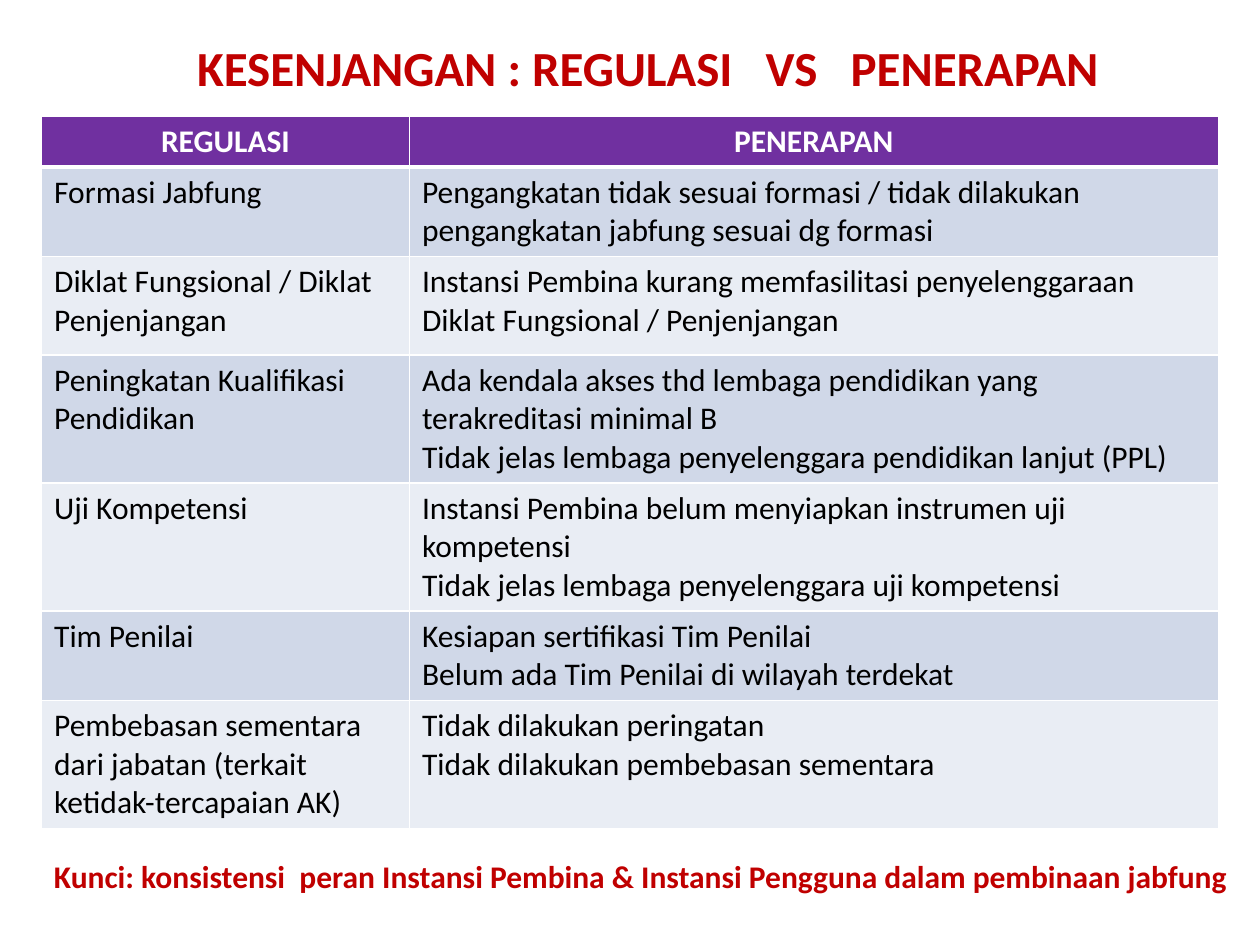
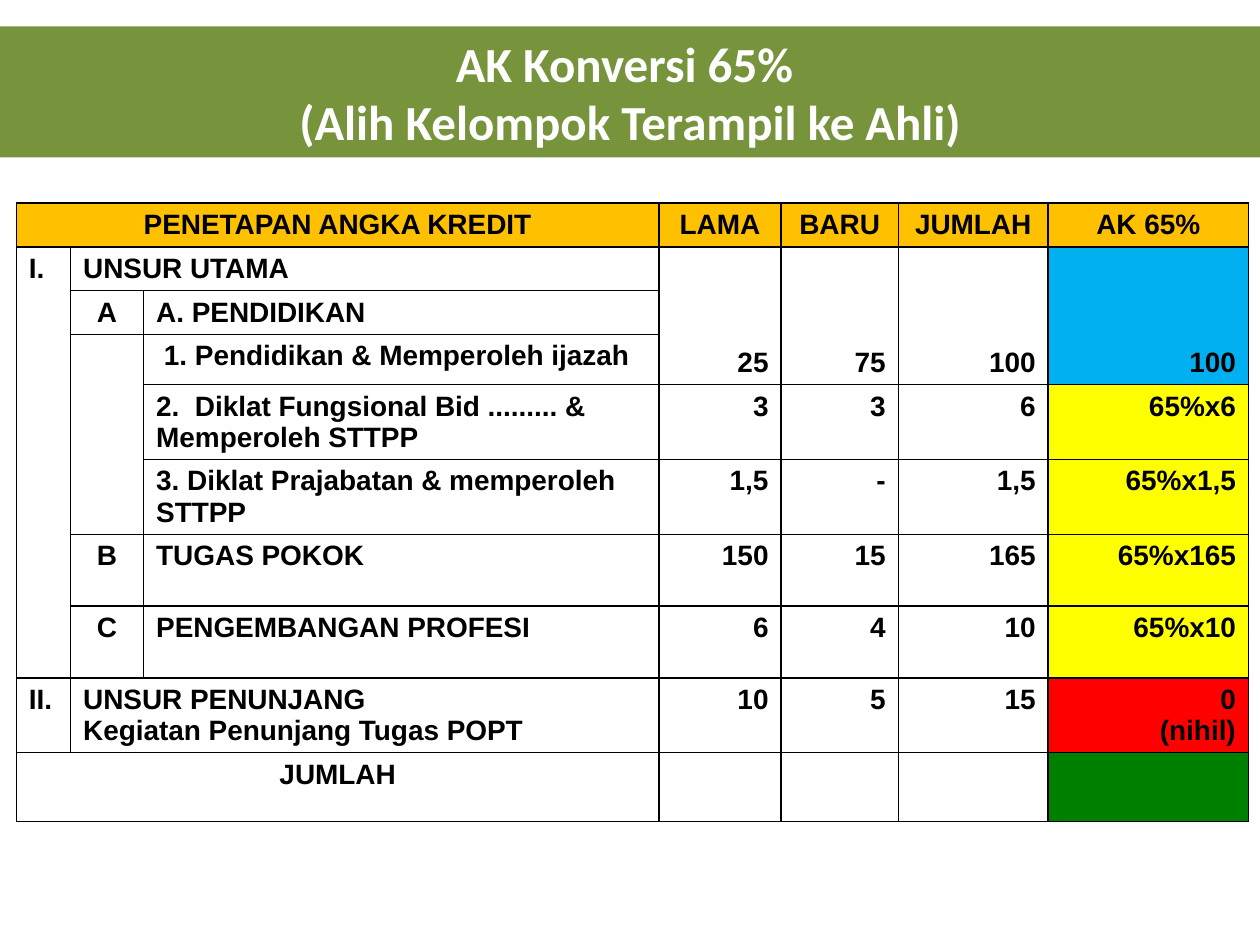
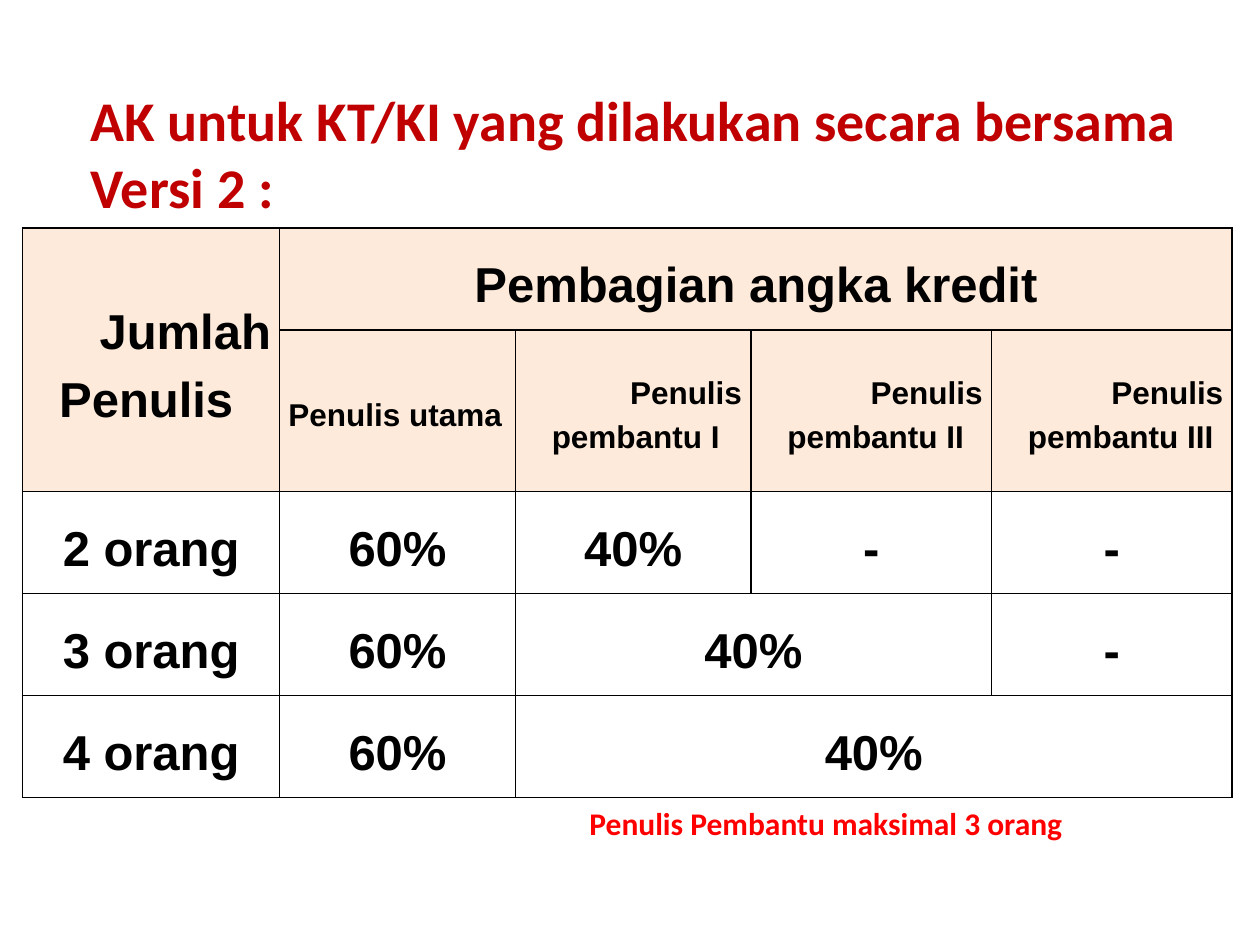
from pptx import Presentation
from pptx.dml.color import RGBColor
from pptx.enum.text import MSO_ANCHOR, MSO_AUTO_SIZE, PP_ALIGN
from pptx.oxml.ns import qn
from pptx.util import Inches, Pt
from lxml import etree

LEFT, CENTER, RIGHT, JUSTIFY = PP_ALIGN.LEFT, PP_ALIGN.CENTER, PP_ALIGN.RIGHT, PP_ALIGN.JUSTIFY
TOP, MIDDLE, BOTTOM = MSO_ANCHOR.TOP, MSO_ANCHOR.MIDDLE, MSO_ANCHOR.BOTTOM
NO_FIT = MSO_AUTO_SIZE.NONE

WHITE = RGBColor(0xFF, 0xFF, 0xFF)
BLACK = RGBColor(0, 0, 0)
DARK_RED = RGBColor(0xC0, 0, 0)
RED = RGBColor(0xFF, 0, 0)
PURPLE = RGBColor(0x70, 0x30, 0xA0)
BAND_DARK = RGBColor(0xD0, 0xD8, 0xE8)
BAND_LIGHT = RGBColor(0xE9, 0xED, 0xF4)
OLIVE = RGBColor(0x77, 0x93, 0x3C)
AMBER = RGBColor(0xFF, 0xC0, 0)
BLUE = RGBColor(0, 0xB0, 0xF0)
YELLOW = RGBColor(0xFF, 0xFF, 0)
GREEN = RGBColor(0, 0x80, 0)
PEACH = RGBColor(0xFD, 0xEA, 0xDA)

HEAD_FONT, TABLE_FONT = "Calibri", "Arial"
W, H = Inches(10), Inches(7.5)


# Lengths are percentages of the slide's width and height
def across(share):
    return int(W * share / 100)


def down(share):
    return int(H * share / 100)


def put_text(tf, text, size=18, color=BLACK, bold=True, font=HEAD_FONT, align=LEFT,
             line=None, gap=None, margin=None, indent=None):
    """Write one paragraph for each line of text."""
    for i, words in enumerate(text.split("\n")):
        p = tf.paragraphs[0] if i == 0 else tf.add_paragraph()
        p.alignment = align
        if line:
            p.line_spacing = line
        if gap is not None:
            p.space_before = p.space_after = Pt(gap)
        if margin is not None:
            pPr = p._p.get_or_add_pPr()
            pPr.set("marL", str(Inches(margin)))
            pPr.set("indent", str(Inches(indent)))
        r = p.add_run()
        r.text = words
        r.font.name, r.font.size, r.font.bold = font, Pt(size), bold
        r.font.color.rgb = color


def set_box(sp, box, wrap):
    left, top, width, height = box
    sp.left, sp.top = across(left), down(top)
    sp.width, sp.height = across(width), down(height)
    tf = sp.text_frame
    tf.word_wrap = wrap
    tf.auto_size = NO_FIT
    return tf


def add_title(s, text, box, fill=None, wrap=False, **fmt):
    sp = s.shapes.title
    tf = set_box(sp, box, wrap)
    tf.vertical_anchor = MIDDLE
    if fill is not None:
        sp.fill.solid()
        sp.fill.fore_color.rgb = fill
    put_text(tf, text, **fmt)


def add_note(s, text, box, color):
    sp = s.shapes.add_textbox(0, 0, 0, 0)
    put_text(set_box(sp, box, False), text, color=color)


def set_borders(cell, color, widths):
    """Draw the left, right, top and bottom borders, widths in points."""
    tcPr = cell._tc.get_or_add_tcPr()
    for side, width in zip("LRTB", widths):
        ln = etree.SubElement(tcPr, qn("a:ln" + side), w=str(Pt(width)))
        fill = etree.SubElement(ln, qn("a:solidFill"))
        etree.SubElement(fill, qn("a:srgbClr"), val=str(color))


def add_grid(s, left, top, cols, rows, cells, look, line_color, spans=(),
             insets=(0.1, 0.05), head_line=1, **fmt):
    """Add a table; look(row, col) gives a cell's fill, anchor and text format."""
    table = s.shapes.add_table(len(rows), len(cols), across(left), down(top),
                               across(sum(cols)), down(sum(rows))).table
    table.first_row = table.horz_banding = False
    for col, share in zip(table.columns, cols):
        col.width = across(share)
    for row, share in zip(table.rows, rows):
        row.height = down(share)
    for r, words in enumerate(cells):
        for c, text in enumerate(words):
            cell = table.cell(r, c)
            style = {**fmt, **look(r, c)}
            fill = style.pop("fill", None)
            cell.vertical_anchor = style.pop("anchor", TOP)
            cell.margin_left = cell.margin_right = Inches(insets[0])
            cell.margin_top = cell.margin_bottom = Inches(insets[1])
            set_borders(cell, line_color, (1, 1, head_line if r == 1 else 1,
                                           head_line if r == 0 else 1))
            if fill is None:
                cell.fill.background()
            else:
                cell.fill.solid()
                cell.fill.fore_color.rgb = fill
            put_text(cell.text_frame, text, **style)
    for r1, c1, r2, c2 in spans:
        table.cell(r1, c1).merge(table.cell(r2, c2))


# Slide 1: regulation against practice
GAPS = [
    ("REGULASI", "PENERAPAN"),
    ("Formasi Jabfung",
     "Pengangkatan tidak sesuai formasi / tidak dilakukan pengangkatan jabfung sesuai dg formasi"),
    ("Diklat Fungsional / Diklat Penjenjangan",
     "Instansi Pembina kurang memfasilitasi penyelenggaraan Diklat Fungsional / Penjenjangan"),
    ("Peningkatan Kualifikasi Pendidikan",
     "Ada kendala akses thd lembaga pendidikan yang terakreditasi minimal B\n"
     "Tidak jelas lembaga penyelenggara pendidikan lanjut (PPL)"),
    ("Uji Kompetensi",
     "Instansi Pembina belum menyiapkan instrumen uji kompetensi\n"
     "Tidak jelas lembaga penyelenggara uji kompetensi"),
    ("Tim Penilai",
     "Kesiapan sertifikasi Tim Penilai\nBelum ada Tim Penilai di wilayah terdekat"),
    ("Pembebasan sementara dari jabatan (terkait ketidak-tercapaian AK)",
     "Tidak dilakukan peringatan\nTidak dilakukan pembebasan sementara"),
]


def gap_look(r, c):
    if r == 0:
        return dict(fill=PURPLE, color=WHITE, align=CENTER)
    return dict(fill=BAND_DARK if r % 2 else BAND_LIGHT, bold=False)


def gap_slide(s):
    add_title(s, "KESENJANGAN : REGULASI   VS   PENERAPAN", (14.2, 3.33, 74.4, 7.6),
              size=28, color=DARK_RED, align=CENTER)
    add_grid(s, 3.3, 12.27, (29.2, 64.2), (5.2, 9.33, 10.4, 13.33, 13.33, 9.47, 13.33),
             GAPS, gap_look, WHITE, head_line=3)
    add_note(s, "Kunci: konsistensi  peran Instansi Pembina & Instansi Pengguna "
                "dalam pembinaan jabfung", (3.3, 90, 95.9, 5.33), DARK_RED)


# Slide 2: credit points after conversion
CREDITS = [
    ("PENETAPAN ANGKA KREDIT", "", "", "LAMA", "BARU", "JUMLAH", "AK 65%"),
    ("I.", "UNSUR UTAMA", "", "25", "75", "100", "100"),
    ("", "A", "A. PENDIDIKAN", "", "", "", ""),
    ("", "", " 1. Pendidikan & Memperoleh ijazah", "", "", "", ""),
    ("", "", "2.  Diklat Fungsional Bid ......... & Memperoleh STTPP", "3", "3", "6", "65%x6"),
    ("", "", "3. Diklat Prajabatan & memperoleh STTPP", "1,5", "-", "1,5", "65%x1,5"),
    ("", "B", "TUGAS POKOK", "150", "15", "165", "65%x165"),
    ("", "C", "PENGEMBANGAN PROFESI", "6", "4", "10", "65%x10"),
    ("II.", "UNSUR PENUNJANG\nKegiatan Penunjang Tugas POPT", "", "10", "5", "15", "0\n(nihil)"),
    ("JUMLAH", "", "", "", "", "", ""),
]
CREDIT_SPANS = [(0, 0, 0, 2), (1, 0, 7, 0), (1, 1, 1, 2), (3, 1, 5, 1),
                (8, 1, 8, 2), (9, 0, 9, 2)] + [(1, c, 3, c) for c in range(3, 7)]
RESULT_FILLS = [AMBER] + [BLUE] * 3 + [YELLOW] * 4 + [RED, GREEN]


def credit_look(r, c):
    if r == 0:
        return dict(fill=AMBER, align=CENTER, anchor=MIDDLE if c == 0 else TOP)
    if c >= 3:
        return dict(fill=RESULT_FILLS[r] if c == 6 else None, align=RIGHT,
                    anchor=BOTTOM if r <= 3 else TOP)
    centered = r == 9 or (c == 1 and r in (2, 6, 7))
    return dict(align=CENTER if centered else LEFT)


def credit_slide(s):
    add_title(s, "AK Konversi 65% \n(Alih Kelompok Terampil ke Ahli)", (0, 2.8, 100, 13.87),
              fill=OLIVE, wrap=True, size=28, color=WHITE, align=CENTER)
    add_grid(s, 1.3, 21.47, (4.3, 5.8, 40.9, 9.7, 9.3, 11.9, 15.9),
             (4.67, 4.6, 4.6, 5.3, 7.9, 7.9, 7.6, 7.6, 7.9, 7.3),
             CREDITS, credit_look, BLACK, CREDIT_SPANS, size=16, font=TABLE_FONT)


# Slide 3: sharing credit among authors
SHARES = [
    (" Jumlah Penulis", "Pembagian angka kredit", "", "", ""),
    ("", "Penulis utama", " Penulis pembantu I", " Penulis pembantu II",
     " Penulis pembantu III"),
    ("2 orang", "60%", "40%", "-", "-"),
    ("3 orang", "60%", "40%", "", "-"),
    ("4 orang", "60%", "40%", "", ""),
]
SHARE_SPANS = [(0, 0, 1, 0), (0, 1, 0, 4), (3, 2, 3, 3), (4, 2, 4, 4)]


def share_look(r, c):
    justified = r == 1 or (r, c) == (0, 0)
    return dict(fill=PEACH if r < 2 else None, anchor=MIDDLE, size=18 if r == 1 else 28,
                align=JUSTIFY if justified else CENTER)


def share_slide(s):
    add_title(s, "AK untuk KT/KI yang dilakukan secara bersama\nVersi 2 :",
              (6.2, 8.27, 91.6, 15.73), size=32, color=DARK_RED)
    add_grid(s, 1.8, 24.13, (20.4, 18.7, 18.7, 19.1, 19.1), (10.8, 17.07, 10.8, 10.8, 10.8),
             SHARES, share_look, BLACK, SHARE_SPANS, insets=(0.07, 0), font=TABLE_FONT,
             line=1.25, gap=3, margin=0.22, indent=-0.24)
    add_note(s, "Penulis Pembantu maksimal 3 orang", (45.8, 84.4, 39.9, 5.33), RED)


def main():
    prs = Presentation()
    prs.slide_width, prs.slide_height = W, H
    title_only = prs.slide_layouts[5]
    for build in (gap_slide, credit_slide, share_slide):
        build(prs.slides.add_slide(title_only))
    prs.save("out.pptx")


if __name__ == "__main__":
    main()
